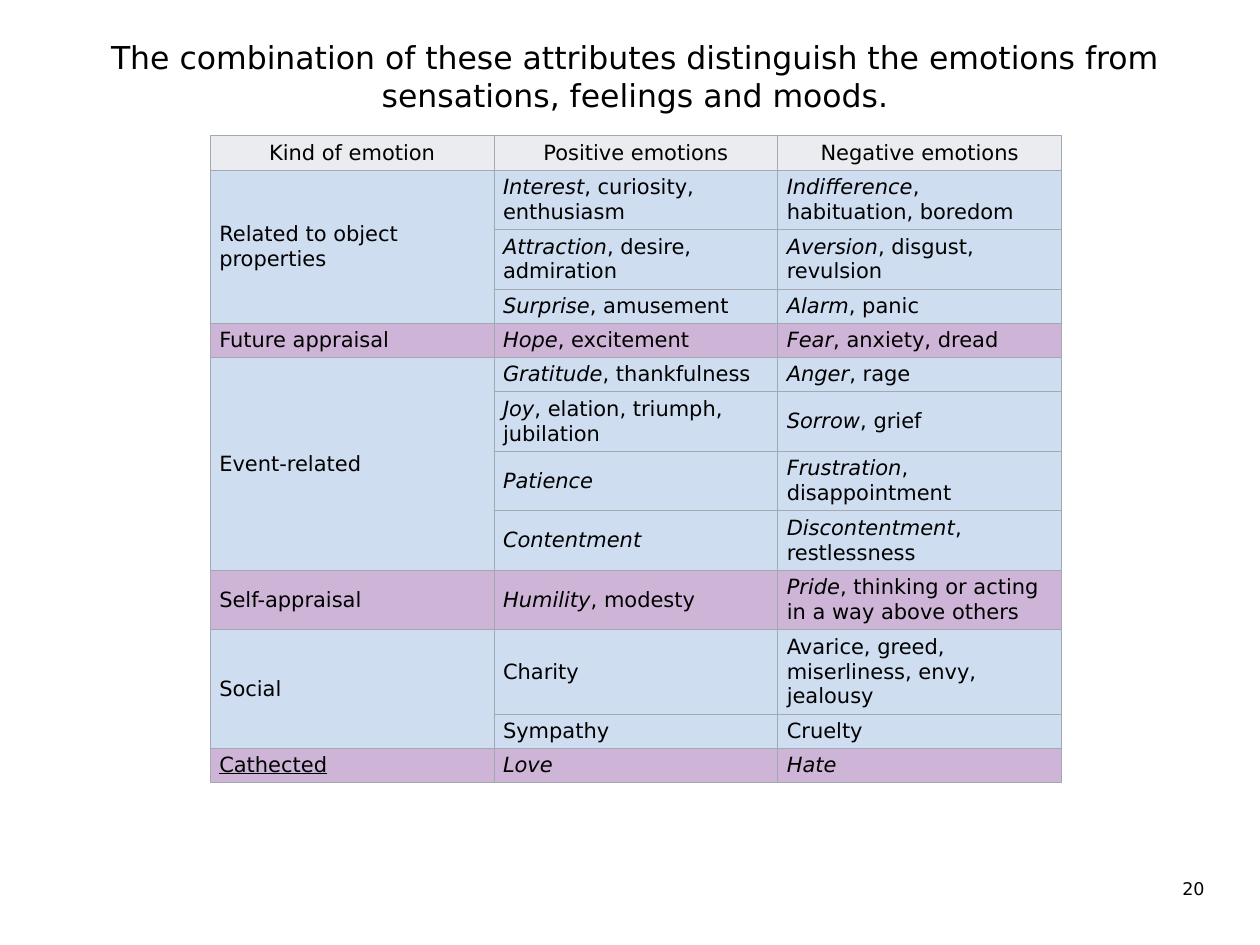
"""Build a slide with a table that contrasts positive and negative emotions."""
import pptx
import pptx.dml.color
import pptx.enum.text
import pptx.oxml
import pptx.oxml.ns
import pptx.util
from pptx.util import Cm

BLACK = pptx.dml.color.RGBColor(0x00, 0x00, 0x00)
HEADER_GREY = pptx.dml.color.RGBColor(0xEA, 0xEC, 0xF0)
BLUE = pptx.dml.color.RGBColor(0xCE, 0xDD, 0xF0)
PURPLE = pptx.dml.color.RGBColor(0xCE, 0xB5, 0xD7)
BORDER_GREY = pptx.dml.color.RGBColor(0xA2, 0xA9, 0xB1)
FONT = "DejaVu Sans"
LEFT = pptx.enum.text.PP_ALIGN.LEFT
CENTER = pptx.enum.text.PP_ALIGN.CENTER
RIGHT = pptx.enum.text.PP_ALIGN.RIGHT
TOP = pptx.enum.text.MSO_ANCHOR.TOP
MIDDLE = pptx.enum.text.MSO_ANCHOR.MIDDLE

HEADINGS = ["Kind of emotion", "Positive emotions", "Negative emotions"]
GROUPS = [
    ("Related to object properties", [
        (("Interest", ", curiosity, enthusiasm"), ("Indifference", ", habituation, boredom"), 2),
        (("Attraction", ", desire, admiration"), ("Aversion", ", disgust, revulsion"), 2),
        (("Surprise", ", amusement"), ("Alarm", ", panic"), 1),
    ]),
    ("Future appraisal", [
        (("Hope", ", excitement"), ("Fear", ", anxiety, dread"), 1),
    ]),
    ("Event-related", [
        (("Gratitude", ", thankfulness"), ("Anger", ", rage"), 1),
        (("Joy", ", elation, triumph, jubilation"), ("Sorrow", ", grief"), 2),
        (("Patience", ""), ("Frustration", ", disappointment"), 2),
        (("Contentment", ""), ("Discontentment", ", restlessness"), 2),
    ]),
    ("Self-appraisal", [
        (("Humility", ", modesty"), ("Pride", ", thinking or acting in a way above others"), 2),
    ]),
    ("Social", [
        (("", "Charity"), ("", "Avarice, greed, miserliness, envy, jealousy"), 3),
        (("", "Sympathy"), ("", "Cruelty"), 1),
    ]),
    ("Cathected", [
        (("Love", ""), ("Hate", ""), 1),
    ]),
]
ROW_HEIGHTS = {1: Cm(0.69), 2: Cm(1.2), 3: Cm(1.7)}


def write_text(frame, text, lead="", size=12, align=LEFT, underline=None):
    para = frame.paragraphs[0]
    para.alignment = align
    for words, italic in ((lead, True), (text, None)):
        if words:
            span = para.add_run()
            span.text = words
            span.font.name = FONT
            span.font.size = pptx.util.Pt(size)
            span.font.color.rgb = BLACK
            span.font.italic = italic
            span.font.underline = underline


def style_cell(cell, colour):
    cell.margin_left = cell.margin_right = Cm(0.18)
    cell.margin_top = cell.margin_bottom = Cm(0.08)
    cell.vertical_anchor = MIDDLE
    properties = cell._tc.get_or_add_tcPr()
    for side in ("lnL", "lnR", "lnT", "lnB"):
        properties.append(pptx.oxml.parse_xml(
            f'<a:{side} {pptx.oxml.ns.nsdecls("a")} w="{pptx.util.Pt(0.75)}"><a:solidFill>'
            f'<a:srgbClr val="{BORDER_GREY}"/></a:solidFill></a:{side}>'))
    cell.fill.solid()
    cell.fill.fore_color.rgb = colour


deck = pptx.Presentation()
deck.slide_width = Cm(25.4)
deck.slide_height = Cm(19.05)
page = deck.slides.add_slide(deck.slide_layouts[5])

title = page.shapes.title
title.left, title.top, title.width, title.height = Cm(0.64), Cm(0.64), Cm(24.33), Cm(1.8)
title.text_frame.auto_size = pptx.enum.text.MSO_AUTO_SIZE.NONE
title.text_frame.vertical_anchor = TOP
write_text(title.text_frame, "The combination of these attributes distinguish the emotions "
           "from sensations, feelings and moods.", size=18, align=CENTER)

line_counts = [1] + [lines for _, pairs in GROUPS for _, _, lines in pairs]
table = page.shapes.add_table(len(line_counts), len(HEADINGS), Cm(4.24), Cm(2.74),
                              Cm(17.15), Cm(13.04)).table
table.first_row = False
table.horz_banding = False
for column in table.columns:
    column.width = Cm(5.72)
for row, lines in zip(table.rows, line_counts):
    row.height = ROW_HEIGHTS[lines]

for column_index, heading in enumerate(HEADINGS):
    cell = table.cell(0, column_index)
    style_cell(cell, HEADER_GREY)
    write_text(cell.text_frame, heading, align=CENTER)

first_row = 1
for group_index, (kind, pairs) in enumerate(GROUPS):
    colour = PURPLE if group_index % 2 else BLUE
    for row_index, (positive, negative, _) in enumerate(pairs, first_row):
        for column_index in range(len(HEADINGS)):
            style_cell(table.cell(row_index, column_index), colour)
        for column_index, (lead, rest) in enumerate((positive, negative), 1):
            write_text(table.cell(row_index, column_index).text_frame, rest, lead=lead)
    kind_cell = table.cell(first_row, 0)
    write_text(kind_cell.text_frame, kind, underline=kind == "Cathected")
    if len(pairs) > 1:
        kind_cell.merge(table.cell(first_row + len(pairs) - 1, 0))
    first_row += len(pairs)

number_box = page.shapes.add_textbox(Cm(19.25), Cm(17.58), Cm(5.28), Cm(0.84))
number_box.text_frame.word_wrap = True
write_text(number_box.text_frame, "20", size=10, align=RIGHT)

deck.save("out.pptx")
